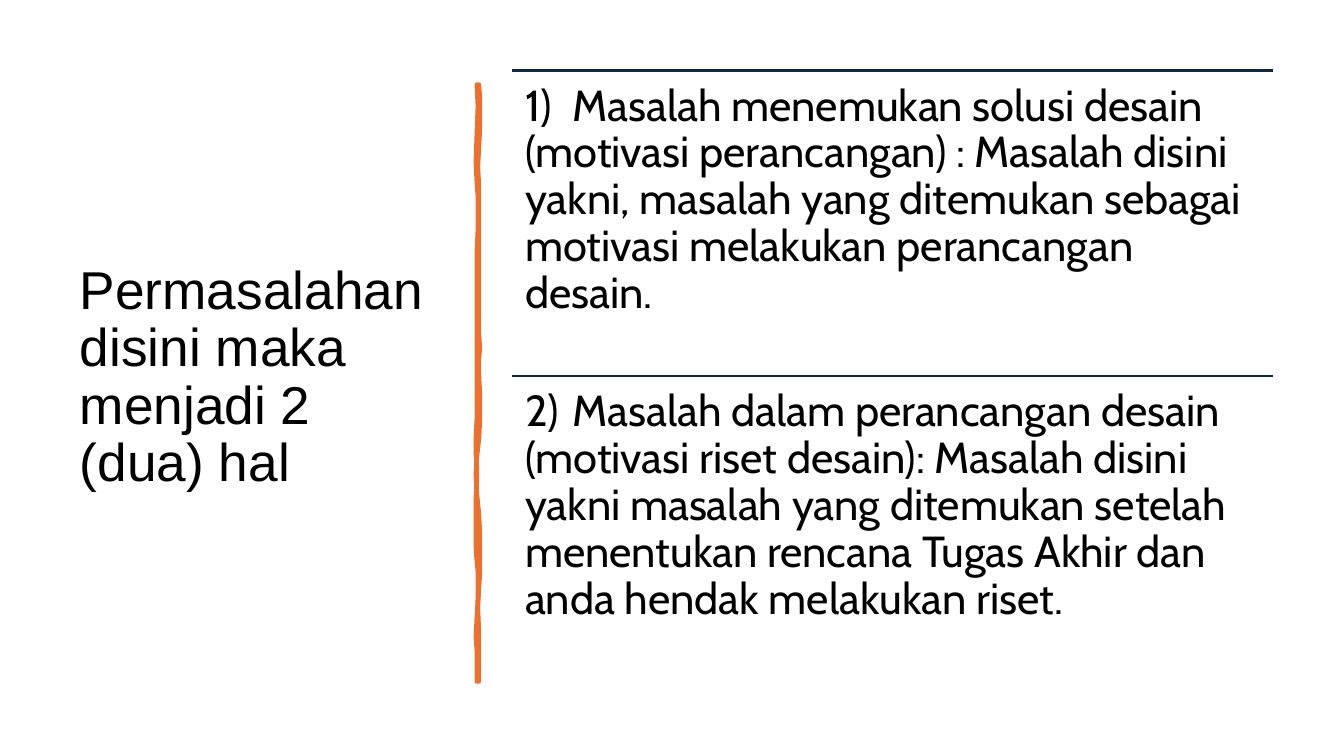
from pptx import Presentation
from pptx.dml.color import RGBColor
from pptx.enum.shapes import MSO_CONNECTOR
from pptx.enum.text import MSO_ANCHOR, PP_ALIGN
from pptx.oxml import parse_xml
from pptx.oxml.ns import nsdecls
from pptx.util import Inches, Pt

prs = Presentation()
prs.slide_width, prs.slide_height = Inches(13.33), Inches(7.5)
s = prs.slides.add_slide(prs.slide_layouts[6])
col, row = prs.slide_width / 100, prs.slide_height / 100


def rgb(code):
    return RGBColor.from_string(code)


def add_text(box, pieces, size, font, anchor, inset, tab=None):
    tb = s.shapes.add_textbox(*[int(v) for v in box])
    tf = tb.text_frame
    tf.word_wrap = True
    tf.vertical_anchor = anchor
    tf.margin_left = tf.margin_right = inset
    tf.margin_top = tf.margin_bottom = inset
    p = tf.paragraphs[0]
    p.alignment = PP_ALIGN.LEFT
    p.line_spacing = 0.9
    if tab:
        p._p.get_or_add_pPr().append(parse_xml(
            f'<a:tabLst {nsdecls("a")}><a:tab pos="{tab}" algn="l"/></a:tabLst>'))
    for piece in pieces:
        r = p.add_run()
        r.text = piece
        r.font.size = Pt(size)
        r.font.name = font
        r.font.color.rgb = rgb("000000")


add_text((5.2 * col, 9.33 * row, 28.05 * col, 81.4 * row),
         ["Permasalahan disini maka menjadi 2 (dua) hal"],
         38, "Arial", MSO_ANCHOR.MIDDLE, Inches(0.1))

start = (475, 84)
curves = [
    (477, 102, 477, 119, 475, 146), (473, 173, 476, 195, 475, 226),
    (474, 257, 475, 262, 475, 294), (474, 325, 477, 342, 475, 356),
    (473, 370, 479, 414, 475, 436), (471, 457, 472, 484, 475, 510),
    (477, 536, 477, 564, 475, 584), (473, 603, 476, 650, 475, 676),
    (474, 676, 473, 676, 473, 676), (474, 646, 471, 644, 473, 613),
    (474, 583, 474, 570, 473, 557), (472, 544, 472, 495, 473, 477),
    (473, 459, 471, 445, 473, 415), (474, 386, 472, 373, 473, 335),
    (474, 298, 472, 281, 473, 250), (474, 218, 475, 200, 473, 181),
    (470, 163, 477, 104, 473, 84),
]
points = []
x, y = start
for x1, y1, x2, y2, x3, y3 in curves:
    for t in (0.25, 0.5, 0.75, 1):
        u = 1 - t
        weights = (u ** 3, 3 * u * u * t, 3 * u * t * t, t ** 3)
        points.append((sum(w * v for w, v in zip(weights, (x, x1, x2, x3))),
                       sum(w * v for w, v in zip(weights, (y, y1, y2, y3)))))
    x, y = x3, y3
fb = s.shapes.build_freeform(*start, scale=Inches(0.01))
fb.add_line_segments(points, close=True)
stroke = fb.convert_to_shape()
stroke.shadow.inherit = False
stroke.fill.solid()
stroke.fill.fore_color.rgb = rgb("E97132")
stroke.line.color.rgb = rgb("E97132")
stroke.line.width = Pt(3.25)
stroke.line._get_or_add_ln().append(parse_xml(f'<a:round {nsdecls("a")}/>'))

problems = [
    ("1)", "Masalah menemukan solusi desain (motivasi perancangan) : Masalah disini "
           "yakni, masalah yang ditemukan sebagai motivasi melakukan perancangan desain."),
    ("2)", "Masalah dalam perancangan desain (motivasi riset desain): Masalah disini "
           "yakni masalah yang ditemukan setelah menentukan rencana Tugas Akhir dan "
           "anda hendak melakukan riset."),
]
left, width, height = 38.1 * col, 56.64 * col, 40.4 * row
for i, (number, text) in enumerate(problems):
    top = 9.33 * row + i * height
    rule = s.shapes.add_connector(MSO_CONNECTOR.STRAIGHT, int(left), int(top),
                                  int(left + width), int(top))
    rule.line.color.rgb = rgb("0E2841")
    rule.line.width = Pt(1.5)
    rule._element.spPr.append(parse_xml(f'<a:effectLst {nsdecls("a")}/>'))
    add_text((left, top, width, height), [number, "\t", text],
             31, "Cabin", MSO_ANCHOR.TOP, Inches(0.13), Inches(0.47))

prs.save("out.pptx")
